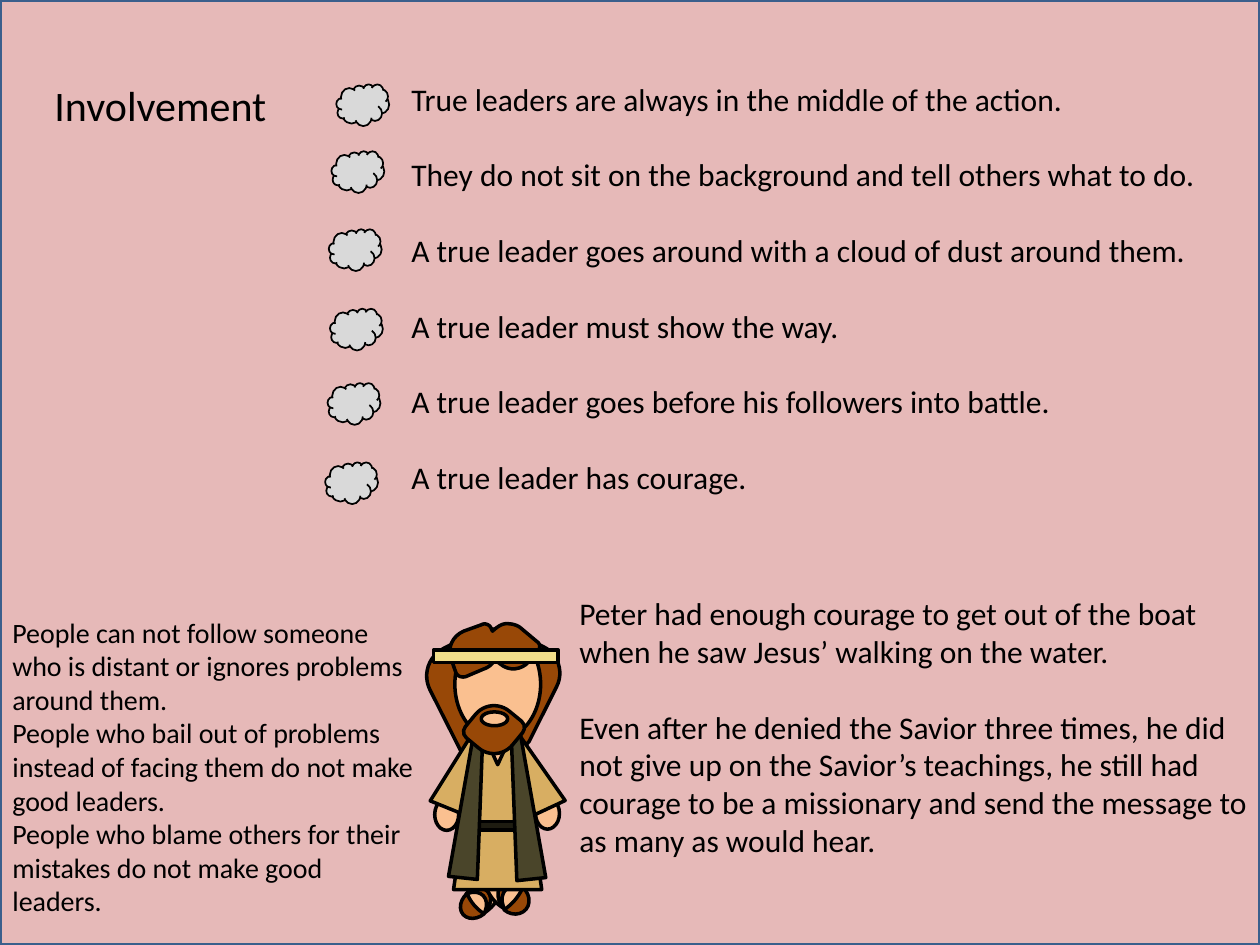
import pptx
import pptx.util
import pptx.dml.color
import pptx.enum.shapes
import pptx.enum.text

Pt = pptx.util.Pt
Kind = pptx.enum.shapes.MSO_SHAPE
RGB = pptx.dml.color.RGBColor.from_string

hues = {
    "rose": "E6B9B8", "edge": "3A5F8C", "ink": "000000", "cloud": "D9D9D9",
    "hair": "984807", "skin": "FAC090", "robe": "D8AE62", "belt": "1E1C11",
    "scarf": "4A452A", "band": "F1DE8B",
}

deck = pptx.Presentation()
deck.slide_width, deck.slide_height = Pt(720), Pt(540)
slide = deck.slides.add_slide(deck.slide_layouts[6])


def paint(shape, fill, line="ink", width=2):
    shape.shadow.inherit = False
    shape.fill.solid()
    shape.fill.fore_color.rgb = RGB(hues[fill])
    shape.line.color.rgb = RGB(hues[line])
    shape.line.width = Pt(width)


def draw(group, kind, fill, box, turn=0, adj=(), flip=False):
    shape = group.shapes.add_shape(kind, *[Pt(v) for v in box])
    paint(shape, fill)
    shape.rotation = turn
    for i, value in enumerate(adj):
        shape.adjustments[i] = value
    if flip:
        shape.element.spPr.xfrm.set("flipH", "1")


back = slide.shapes.add_shape(Kind.RECTANGLE, 0, 0, Pt(720), Pt(540))
paint(back, "rose", "edge")

texts = [
    ((24, 42, 246, 94), 24, 0, ["Involvement"]),
    ((228, 42, 468, 312), 18, 21.6, [
        "True leaders are always in the middle of the action.",
        "They do not sit on the background and tell others what to do.",
        "A true leader goes around with a cloud of dust around them.",
        "A true leader must show the way.",
        "A true leader goes before his followers into battle.",
        "A true leader has courage.",
    ]),
    ((0, 348, 246, 181.5), 16, 0, [
        "People can not follow someone who is distant or ignores problems around them.",
        "People who bail out of problems instead of facing them do not make good leaders.",
        "People who blame others for their mistakes do not make good leaders.",
    ]),
    ((324, 336, 396, 160), 18, 21.6, [
        "Peter had enough courage to get out of the boat when he saw Jesus’ walking on the water.",
        "Even after he denied the Savior three times, he did not give up on the Savior’s teachings, "
        "he still had courage to be a missionary and send the message to as many as would hear.",
    ]),
]
for box, size, gap, lines in texts:
    frame = slide.shapes.add_textbox(*[Pt(v) for v in box]).text_frame
    frame.word_wrap = True
    frame.auto_size = pptx.enum.text.MSO_AUTO_SIZE.SHAPE_TO_FIT_TEXT
    frame.text = "\n".join(lines)
    for para in frame.paragraphs:
        para.font.name = "Calibri"
        para.font.size = Pt(size)
        para.font.color.rgb = RGB(hues["ink"])
    for para in frame.paragraphs[:-1]:
        para.space_after = Pt(gap)

spots = [(192.2, 48.2), (189.4, 86.4), (187.9, 131), (188.6, 176.4), (187.2, 218.9), (185.8, 264.2)]
for left, top in spots:
    cloud = slide.shapes.add_shape(Kind.CLOUD, Pt(left), Pt(top), Pt(30.2), Pt(23.8))
    paint(cloud, "cloud", width=1)

man = slide.shapes.add_group_shape()
lock, oval, moon = Kind.ROUND_2_DIAG_RECTANGLE, Kind.OVAL, Kind.MOON
cloth = Kind.TRAPEZOID
body = [
    (lock, "hair", (280.8, 366.5, 33.8, 57.6), 206.6, (0.167, 0.5)),
    (lock, "hair", (249.8, 367.2, 35.3, 61.9), 333.2, (0, 0.5), True),
    (oval, "skin", (259.9, 359.3, 49, 63.4)),
    (oval, "skin", (267.1, 499, 15.8, 28.1), 45.9),
    (moon, "hair", (263.5, 511.9, 9.4, 15.1), 319.7, (0.875,)),
    (moon, "hair", (270, 505.4, 10.1, 15.1), 135.9, (0.344,)),
    (oval, "skin", (280.8, 495.4, 17.3, 28.1), 314.1),
    (moon, "hair", (292.3, 508.3, 9.4, 16.6), 40.3, (0.875,), True),
    (moon, "hair", (285.1, 501.1, 10.1, 16.6), 224.1, (0.344,), True),
    (oval, "skin", (306, 455.8, 13.7, 18)),
    (oval, "skin", (248.4, 456.5, 13.7, 18)),
    (cloth, "robe", (291.6, 419.8, 23, 44.6), 335, (0.341,)),
    (cloth, "robe", (253.4, 419, 23, 44.6), 22.1, (0.341,)),
    (cloth, "robe", (259.2, 421.2, 50.4, 87.1)),
    (Kind.ISOSCELES_TRIANGLE, "skin", (277.2, 421.2, 14.4, 15.8), 180),
    (Kind.RECTANGLE, "belt", (266.4, 469.4, 36, 5)),
    (cloth, "scarf", (260.6, 419.8, 16.6, 82.1), 6.1, (0.341,)),
    (cloth, "scarf", (290.9, 419.8, 16.6, 82.8), 353.9, (0.341,)),
]
for part in body:
    draw(man, *part)

start = (289.4, 356.4)
curls = [
    (292.3, 356.4, 295.9, 357.1, 298.1, 359.3), (306.7, 366.5),
    (308.9, 367.9, 308.9, 370.1, 307.4, 372.2), (302.4, 378),
    (298.1, 383, 290.9, 383.8, 285.8, 379.4), (283, 377.3), (282.2, 378),
    (280.8, 380.2, 278.6, 381.6, 276.5, 382.3), (266.4, 386.6),
    (264.2, 387.4, 261.4, 386.6, 260.6, 384.5), (257.8, 376.6),
    (255.6, 370.1, 258.5, 363.6, 265, 360.7), (275, 357.1),
    (277.2, 355.7, 280.1, 357.1, 280.8, 359.3), (281.5, 360.7),
    (283.7, 358.6, 286.6, 356.4, 289.4, 356.4),
]
steps = 8
dots = [start]
for curl in curls:
    if len(curl) == 2:
        dots.append(curl)
        continue
    a, b, c, d = dots[-1], curl[:2], curl[2:4], curl[4:]
    for n in range(1, steps + 1):
        t = n / steps
        u = 1 - t
        dots.append(tuple(
            u**3 * a[i] + 3 * u * u * t * b[i] + 3 * u * t * t * c[i] + t**3 * d[i]
            for i in range(2)
        ))
pen = man.shapes.build_freeform(Pt(start[0]), Pt(start[1]))
pen.add_line_segments([(Pt(x), Pt(y)) for x, y in dots[1:]], close=True)
paint(pen.convert_to_shape(), "hair")

front = [
    (lock, "hair", (268.6, 403.2, 27.4, 27.4), 309.6, (0.167, 0.5)),
    (oval, "skin", (275, 406.8, 15.1, 7.9)),
    (Kind.RECTANGLE, "band", (247.7, 371.5, 71.3, 7.2)),
]
for part in front:
    draw(man, *part)

deck.save("out.pptx")
